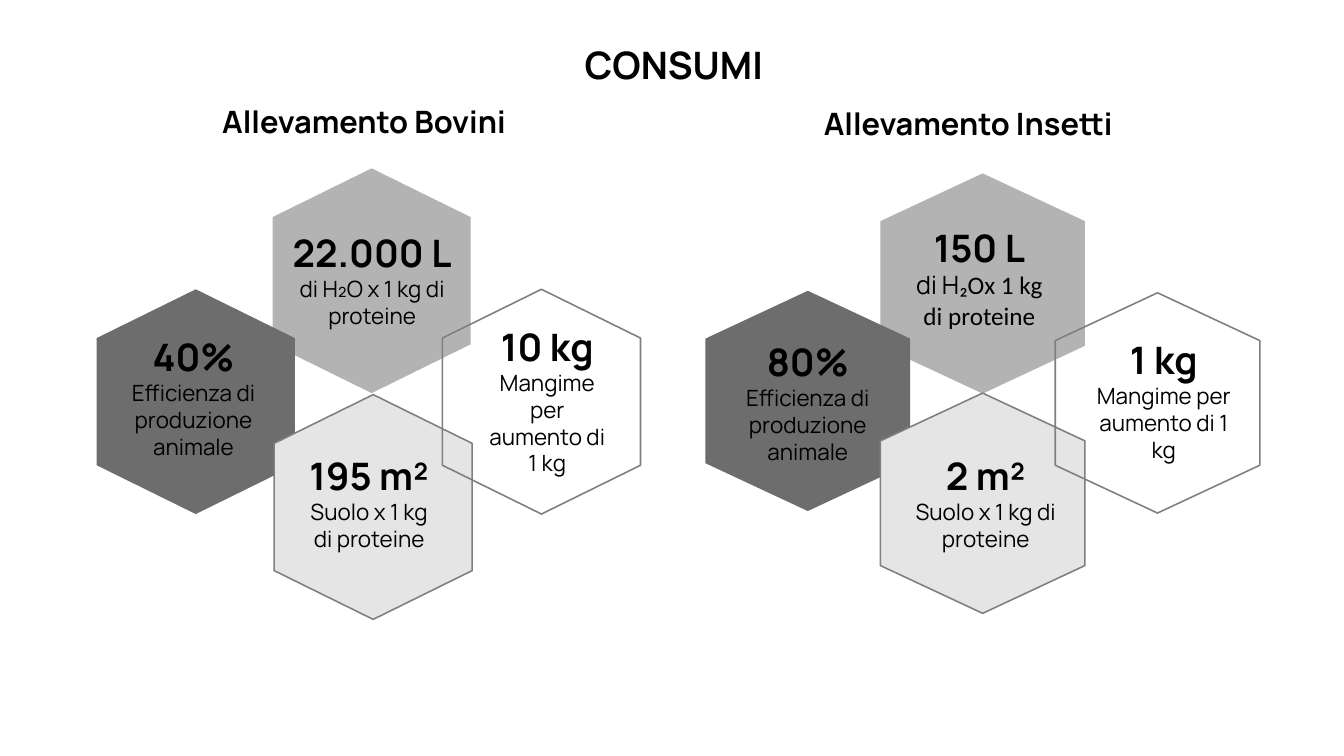
"""Build the CONSUMI slide comparing cattle and insect farming."""
from pptx import Presentation
from pptx.dml.color import RGBColor
from pptx.enum import text
from pptx.util import Inches, Pt

BLACK = RGBColor(0x00, 0x00, 0x00)
SILVER = RGBColor(0xB3, 0xB3, 0xB3)
SLATE = RGBColor(0x6D, 0x6D, 0x6D)
PALE = RGBColor(0xE5, 0xE5, 0xE5)
OUTLINE = RGBColor(0x7F, 0x7F, 0x7F)
FONT = "Manrope"
SHOULDER = 0.217

HEX_STYLES = [(SILVER, False), (SLATE, False), (PALE, True), (None, True)]
CATTLE_CELLS = [(5.41, 3.34), (1.92, 5.74), (5.44, 7.83), (8.78, 5.74)]
INSECT_CELLS = [(17.47, 3.44), (14, 5.77), (17.47, 7.8), (20.94, 5.81)]

EFFICIENCY = "Efficienza di produzione animale"
FEED = "Mangime per aumento di 1 kg"
SOIL = "Suolo x 1 kg di proteine"
FACTS = [
    ((5.57, 4.51, 3.63, 2.09), "22.000 L", [("di H₂O x 1 kg di proteine", 32, FONT)]),
    ((2.14, 6.57, 3.4, 2.63), "40%", [(EFFICIENCY, 32, FONT)]),
    ((9.49, 6.37, 2.74, 3.16), "10 kg", [(FEED, 32, FONT)]),
    ((5.97, 8.94, 2.71, 2.09), "195 m²", [(SOIL, 32, FONT)]),
    ((17.89, 4.4, 3.09, 2.22), "150 L",
     [("di H", 36, FONT), ("₂Ox 1 kg di proteine", 36, "Calibri")]),
    ((14.21, 6.67, 3.64, 2.63), "80%", [(EFFICIENCY, 32, FONT)]),
    ((21.61, 6.64, 2.97, 2.63), "1 kg", [(FEED, 32, FONT)]),
    ((17.94, 8.94, 3.24, 2.09), "2 m²", [(SOIL, 32, FONT)]),
]


def add_hexagon(group, left, top, width, height, fill, outlined):
    """Add one pointed-top hexagon to a group."""
    corners = [(0.5, 0), (1, SHOULDER), (1, 1 - SHOULDER),
               (0.5, 1), (0, 1 - SHOULDER), (0, SHOULDER)]
    points = [(Inches(left + x * width), Inches(top + y * height)) for x, y in corners]
    builder = group.shapes.build_freeform(*points[0])
    builder.add_line_segments(points[1:], close=True)
    hexagon = builder.convert_to_shape()
    hexagon.shadow.inherit = False
    if fill is None:
        hexagon.fill.background()
    else:
        hexagon.fill.solid()
        hexagon.fill.fore_color.rgb = fill
    if outlined:
        hexagon.line.color.rgb = OUTLINE
        hexagon.line.width = Pt(2.25)
    else:
        hexagon.line.fill.background()


def add_cluster(slide, cells, width, height):
    """Add the four grouped hexagons of one kind of farming."""
    group = slide.shapes.add_group_shape()
    for (left, top), (fill, outlined) in zip(cells, HEX_STYLES):
        add_hexagon(group, left, top, width, height, fill, outlined)


def add_span(para, words, size, name=FONT, bold=False):
    """Add one formatted run to a paragraph."""
    span = para.add_run()
    span.text = words
    for key, value in {"size": Pt(size), "name": name, "bold": bold}.items():
        setattr(span.font, key, value)
    span.font.color.rgb = BLACK


def add_text(slide, place, heading, size, details=(), tight=False):
    """Add a centred bold heading with an optional detail paragraph."""
    box = slide.shapes.add_textbox(*map(Inches, place))
    frame = box.text_frame
    layout = {"word_wrap": True}
    if tight:
        sides = ("left", "top", "right", "bottom")
        layout.update({f"margin_{side}": 0 for side in sides})
    else:
        layout["auto_size"] = text.MSO_AUTO_SIZE.SHAPE_TO_FIT_TEXT
    for key, value in layout.items():
        setattr(frame, key, value)
    para = frame.paragraphs[0]
    para.alignment = text.PP_ALIGN.CENTER
    add_span(para, heading, size, bold=True)
    if details:
        para = frame.add_paragraph()
        para.alignment = text.PP_ALIGN.CENTER
        for words, detail_size, name in details:
            add_span(para, words, detail_size, name)


def main():
    """Build and save the deck."""
    deck = Presentation()
    deck.slide_width, deck.slide_height = Inches(26.67), Inches(15)
    slide = deck.slides.add_slide(deck.slide_layouts[6])
    add_cluster(slide, CATTLE_CELLS, 3.93, 4.46)
    add_text(slide, (3, 2.03, 8.45, 1.11), "Allevamento Bovini", 44, tight=True)
    add_text(slide, (10.9, 0.83, 4.94, 0.51), "CONSUMI", 54, tight=True)
    add_text(slide, (15.36, 2.03, 7.71, 0.84), "Allevamento Insetti", 44)
    add_cluster(slide, INSECT_CELLS, 4.06, 4.37)
    for place, amount, details in FACTS:
        add_text(slide, place, amount, 54, details)
    deck.save("out.pptx")


if __name__ == "__main__":
    main()
